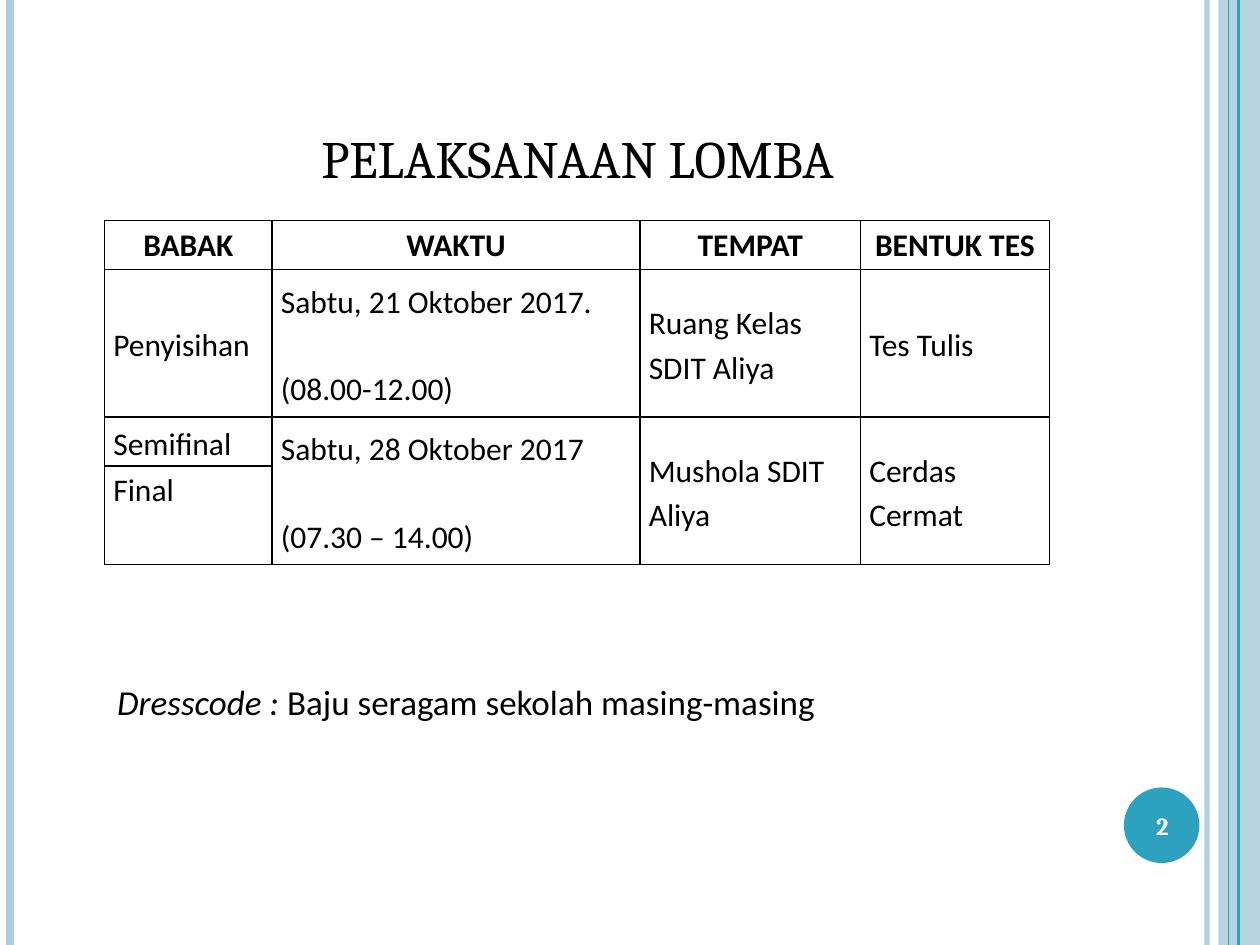
from dataclasses import dataclass

from lxml import etree
from pptx import Presentation
from pptx.dml.color import RGBColor
from pptx.enum import shapes, text
from pptx.oxml import ns
from pptx.util import Inches, Pt


@dataclass(frozen=True)
class Theme:
    """Colours, fonts and type sizes of the slide."""
    ink: RGBColor = RGBColor(0, 0, 0)
    paper: RGBColor = RGBColor(255, 255, 255)
    accent: RGBColor = RGBColor.from_string("2DA2BF")
    pale: RGBColor = RGBColor.from_string("ADCEDC")
    heading: str = "Cambria"
    body: str = "Calibri"
    title_size: int = 30
    note_size: int = 20
    table_size: int = 18
    number_size: int = 14


T = Theme()
LEFT, CENTER = text.PP_ALIGN.LEFT, text.PP_ALIGN.CENTER
TOP, MIDDLE, BOTTOM = (text.MSO_ANCHOR.TOP, text.MSO_ANCHOR.MIDDLE,
                       text.MSO_ANCHOR.BOTTOM)
RAILS = [(9.58, T.pale, 3, 93), (0.08, T.pale, 4.5, 100),
         (9.83, T.accent, 1.5, 100), (9.75, T.accent, 0.75, 100)]
COLUMNS = [1.33, 2.92, 1.75, 1.5]
ROWS = [0.39, 1.17, 0.39, 0.78]
SCHEDULE = [
    ["BABAK", "WAKTU", "TEMPAT", "BENTUK TES"],
    ["Penyisihan", "Sabtu, 21 Oktober 2017.\n(08.00-12.00)",
     "Ruang Kelas SDIT Aliya", "Tes Tulis"],
    ["Semifinal", "Sabtu, 28 Oktober 2017\n(07.30 – 14.00)",
     "Mushola SDIT Aliya", "Cerdas Cermat"],
    ["Final", "", "", ""],
]


def place(s, box):
    """Move a shape to a box given in inches."""
    s.left, s.top, s.width, s.height = map(Inches, box)


def style(p, font, size, color, align=LEFT, bold=False):
    """Format a whole paragraph."""
    p.alignment = align
    p.font.name, p.font.size, p.font.bold = font, Pt(size), bold
    p.font.color.rgb = color


def set_alpha(s, percent):
    """Make the first solid colour of a shape translucent."""
    color = s._element.spPr.find(".//" + ns.qn("a:srgbClr"))
    etree.SubElement(color, ns.qn("a:alpha"), val=str(percent * 1000))


def add_filled(slide, kind, box, color):
    """Add a flat shape without outline."""
    s = slide.shapes.add_shape(kind, *map(Inches, box))
    s.shadow.inherit = False
    s.fill.solid()
    s.fill.fore_color.rgb = color
    s.line.fill.background()
    return s


def add_rails(slide, height):
    """Draw the vertical lines and the band at the slide edges."""
    band = add_filled(slide, shapes.MSO_SHAPE.RECTANGLE,
                      (9.67, 0, 0.33, height), T.pale)
    set_alpha(band, 87)
    for x, color, width, alpha in RAILS:
        line = slide.shapes.add_connector(
            shapes.MSO_CONNECTOR.STRAIGHT,
            Inches(x), 0, Inches(x), Inches(height))
        line.line.color.rgb, line.line.width = color, Pt(width)
        etree.SubElement(line._element.spPr, ns.qn("a:effectLst"))
        if alpha < 100:
            set_alpha(line, alpha)


def add_number(slide, box, number):
    """Draw the round badge and its slide number."""
    x, y, w, h = box
    add_filled(slide, shapes.MSO_SHAPE.OVAL, box, T.accent)
    label = (x - 0.03, y + 0.02, w + 0.07, h - 0.03)
    tf = slide.shapes.add_textbox(*map(Inches, label)).text_frame
    tf.word_wrap, tf.vertical_anchor = True, MIDDLE
    tf.text = number
    style(tf.paragraphs[0], T.heading, T.number_size, T.paper, CENTER, True)


def fill_title(s, box, words):
    """Write the title into its placeholder."""
    place(s, box)
    tf = s.text_frame
    tf.text = words
    tf.auto_size, tf.vertical_anchor = text.MSO_AUTO_SIZE.NONE, BOTTOM
    style(tf.paragraphs[0], T.heading, T.title_size, T.ink, CENTER)


def fill_note(s, box, label, words):
    """Write the dress code note into the body placeholder."""
    place(s, box)
    tf = s.text_frame
    tf.auto_size, tf.vertical_anchor = text.MSO_AUTO_SIZE.NONE, TOP
    tf.margin_top = Inches(0.9)
    p = tf.paragraphs[0]
    for part, italic in ((label, True), (words, False)):
        r = p.add_run()
        r.text, r.font.italic = part, italic
    style(p, T.body, T.note_size, T.ink)
    p.space_before = Pt(0)
    pPr = p._p.get_or_add_pPr()
    pPr.set("marL", "0")
    pPr.set("indent", "0")
    pPr.insert_element_before(pPr.makeelement(ns.qn("a:buNone"), {}),
                              "a:tabLst", "a:defRPr", "a:extLst")


def add_borders(cell):
    """Rule all four sides of a cell."""
    tcPr = cell._tc.get_or_add_tcPr()
    for i, side in enumerate(("lnL", "lnR", "lnT", "lnB")):
        ln = etree.Element(ns.qn("a:" + side), w=str(Pt(1)))
        fill = etree.SubElement(ln, ns.qn("a:solidFill"))
        etree.SubElement(fill, ns.qn("a:srgbClr"), val=str(T.ink))
        tcPr.insert(i, ln)


def fill_cell(cell, words, header, anchor):
    """Write and format one table cell."""
    cell.fill.background()
    add_borders(cell)
    cell.margin_left = cell.margin_right = Inches(0.07)
    cell.margin_top = cell.margin_bottom = 0
    cell.vertical_anchor = anchor
    cell.text = words
    for i, p in enumerate(cell.text_frame.paragraphs):
        style(p, T.body, T.table_size, T.ink, CENTER if header else LEFT, header)
        p.line_spacing = 1.15
        p.space_before = Pt(25 if i else 0)


def add_schedule(slide, box):
    """Build the schedule table, its last two rows sharing three cells."""
    tbl = slide.shapes.add_table(len(ROWS), len(COLUMNS),
                                 *map(Inches, box)).table
    for col, w in zip(tbl.columns, COLUMNS):
        col.width = Inches(w)
    last = len(ROWS) - 1
    for i, (row, h) in enumerate(zip(SCHEDULE, ROWS)):
        tbl.rows[i].height = Inches(h)
        for j, words in enumerate(row):
            fill_cell(tbl.cell(i, j), words, i == 0,
                      TOP if i in (0, last) else MIDDLE)
    for j in range(1, len(COLUMNS)):
        tbl.cell(last - 1, j).merge(tbl.cell(last, j))


def main():
    """Build the slide and save it."""
    prs = Presentation()
    prs.slide_width, prs.slide_height = Inches(10), Inches(7.5)
    slide = prs.slides.add_slide(prs.slide_layouts[1])
    slide.background.fill.solid()
    slide.background.fill.fore_color.rgb = T.paper
    add_rails(slide, 7.5)
    add_number(slide, (8.92, 6.25, 0.6, 0.6), "2")
    fill_title(slide.shapes.title, (0.5, 0.3, 8.17, 1.25), "PELAKSANAAN LOMBA")
    fill_note(slide.placeholders[1], (0.83, 4.5, 8.17, 5.33),
              "Dresscode :", " Baju seragam sekolah masing-masing")
    add_schedule(slide, (0.83, 1.75, sum(COLUMNS), sum(ROWS)))
    prs.save("out.pptx")


if __name__ == "__main__":
    main()
